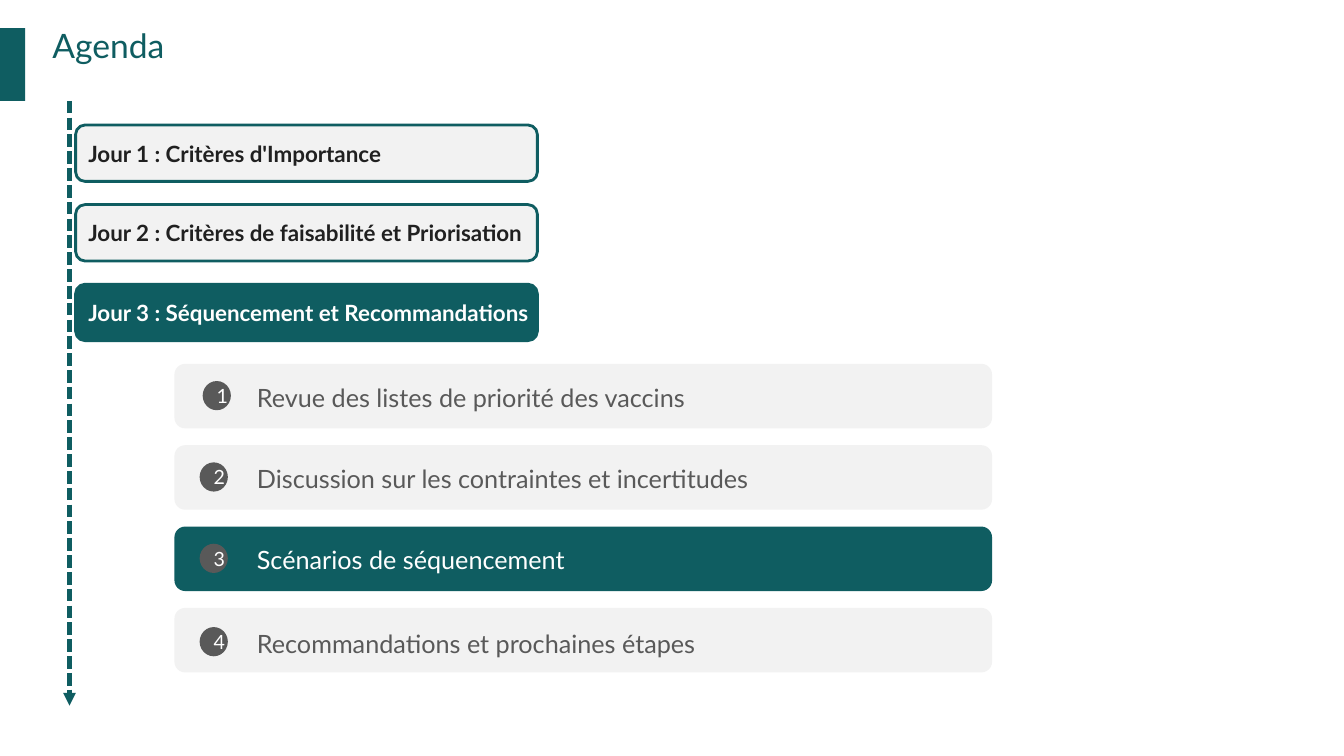
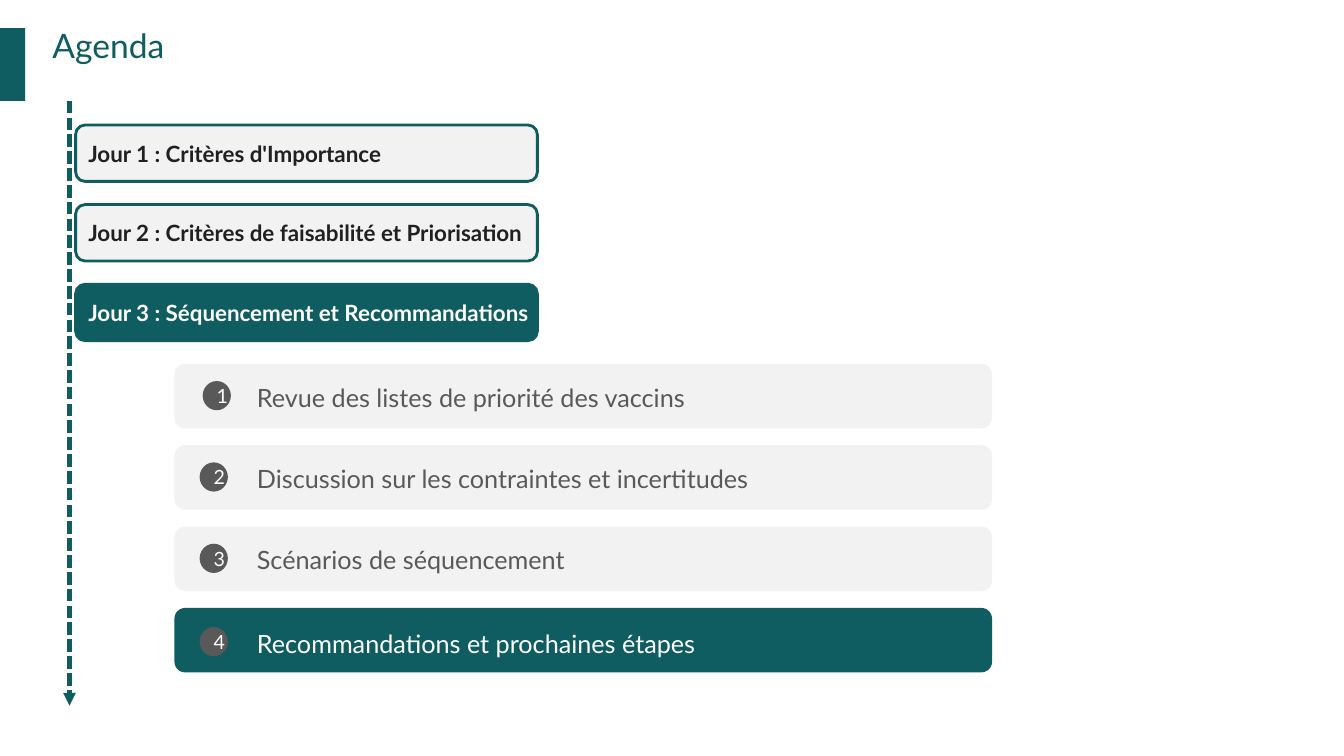
from dataclasses import dataclass

from lxml import etree
from pptx import Presentation
from pptx.dml.color import RGBColor
from pptx.enum.dml import MSO_LINE
from pptx.enum.shapes import MSO_CONNECTOR, MSO_SHAPE
from pptx.enum.text import MSO_ANCHOR, PP_ALIGN
from pptx.oxml.ns import qn
from pptx.util import Inches, Pt

RECT, ROUND, OVAL = MSO_SHAPE.RECTANGLE, MSO_SHAPE.ROUNDED_RECTANGLE, MSO_SHAPE.OVAL
LEFT, CENTER = PP_ALIGN.LEFT, PP_ALIGN.CENTER
TOP, MIDDLE = MSO_ANCHOR.TOP, MSO_ANCHOR.MIDDLE
TITLE_ONLY = 5

TITLE = "Agenda"
DAYS = [
    "Jour 1 : Critères d'Importance",
    "Jour 2 : Critères de faisabilité et Priorisation",
    "Jour 3 : Séquencement et Recommandations",
]
TODAY = 2
# text, left of the number dot, extra drop of dot and text
ITEMS = [
    ("Revue des listes de priorité des vaccins", 2.01, 0),
    ("Discussion sur les contraintes et incertitudes", 1.98, 0),
    ("Scénarios de séquencement", 1.98, 0),
    ("Recommandations et prochaines étapes", 1.98, 0.02),
]
ACTIVE = [2, 3]  # highlighted item of each slide

DAY_TOP, DAY_STEP = 1.24, 0.79
ITEM_TOP, ITEM_STEP = 3.61, 0.807


@dataclass(frozen=True)
class Theme:
    font: str = "Lato"
    teal: str = "0F5D61"
    pale: str = "F2F2F2"
    ink: str = "202020"
    gray: str = "595959"
    white: str = "FFFFFF"
    title: int = 24
    day: int = 16
    item: int = 18
    dot: int = 14


T = Theme()


def rgb(code):
    return RGBColor.from_string(code)


def write(shape, text, size, color, bold=False, align=LEFT, frame=None):
    """Set the text of a shape; frame holds text frame settings."""
    body = shape.text_frame
    body.text = text
    for name, value in {"word_wrap": True, **(frame or {})}.items():
        setattr(body, name, value)
    para = body.paragraphs[0]
    para.alignment = align
    font = para.runs[0].font
    look = {"name": T.font, "size": Pt(size), "bold": bold}
    for name, value in look.items():
        setattr(font, name, value)
    font.color.rgb = rgb(color)


def block(shapes, kind, box, fill, edge=None):
    shape = shapes.add_shape(kind, *map(Inches, box))
    shape.shadow.inherit = False
    shape.fill.solid()
    shape.fill.fore_color.rgb = rgb(fill)
    if edge:
        shape.line.color.rgb = rgb(edge)
        shape.line.width = Pt(2)
    else:
        shape.line.fill.background()
    return shape


def head(slide):
    block(slide.shapes, RECT, (-0.01, 0.28, 0.26, 0.72), T.teal)
    flat = dict.fromkeys(
        ("margin_left", "margin_top", "margin_right", "margin_bottom"), 0)
    write(slide.shapes.title, TITLE, T.title, T.teal,
          frame={**flat, "vertical_anchor": TOP})


def arrow(slide):
    ends = map(Inches, (0.69, 1, 0.69, 7))
    link = slide.shapes.add_connector(MSO_CONNECTOR.STRAIGHT, *ends)
    line = link.line
    line.color.rgb = rgb(T.teal)
    line.width = Pt(3)
    line.dash_style = MSO_LINE.SQUARE_DOT
    etree.SubElement(line._get_or_add_ln(), qn("a:tailEnd"), type="triangle")
    etree.SubElement(link._element.spPr, qn("a:effectLst"))


def days(slide):
    for i, text in enumerate(DAYS):
        fill, color = (T.teal, T.white) if i == TODAY else (T.pale, T.ink)
        box = (0.75, DAY_TOP + i * DAY_STEP, 4.58, 0.56)
        shape = block(slide.shapes, ROUND, box, fill, T.teal)
        write(shape, text, T.day, color, bold=True,
              frame={"margin_right": 0, "vertical_anchor": MIDDLE})


def items(slide, active):
    for i, (text, left, drop) in enumerate(ITEMS):
        fill, color = (T.teal, T.white) if i == active else (T.pale, T.gray)
        top = ITEM_TOP + i * ITEM_STEP
        group = slide.shapes.add_group_shape().shapes
        block(group, ROUND, (1.73, top, 8.11, 0.64), fill)
        dot = block(group, OVAL, (left, top + 0.17 + drop, 0.28, 0.29), T.gray)
        write(dot, str(i + 1), T.dot, T.white, align=CENTER,
              frame={"vertical_anchor": MIDDLE})
        box = (2.45, top + 0.13 + drop, 6.93, 0.4)
        label = group.add_textbox(*map(Inches, box))
        write(label, text, T.item, color)


def main():
    deck = Presentation()
    deck.slide_width, deck.slide_height = Inches(13.33), Inches(7.5)
    layout = deck.slide_layouts[TITLE_ONLY]
    place = {"left": 0.52, "top": 0.25, "width": 12.55, "height": 0.8}
    for name, value in place.items():
        setattr(layout.placeholders[0], name, Inches(value))
    for active in ACTIVE:
        slide = deck.slides.add_slide(layout)
        head(slide)
        arrow(slide)
        days(slide)
        items(slide, active)
    deck.save("out.pptx")


if __name__ == "__main__":
    main()
